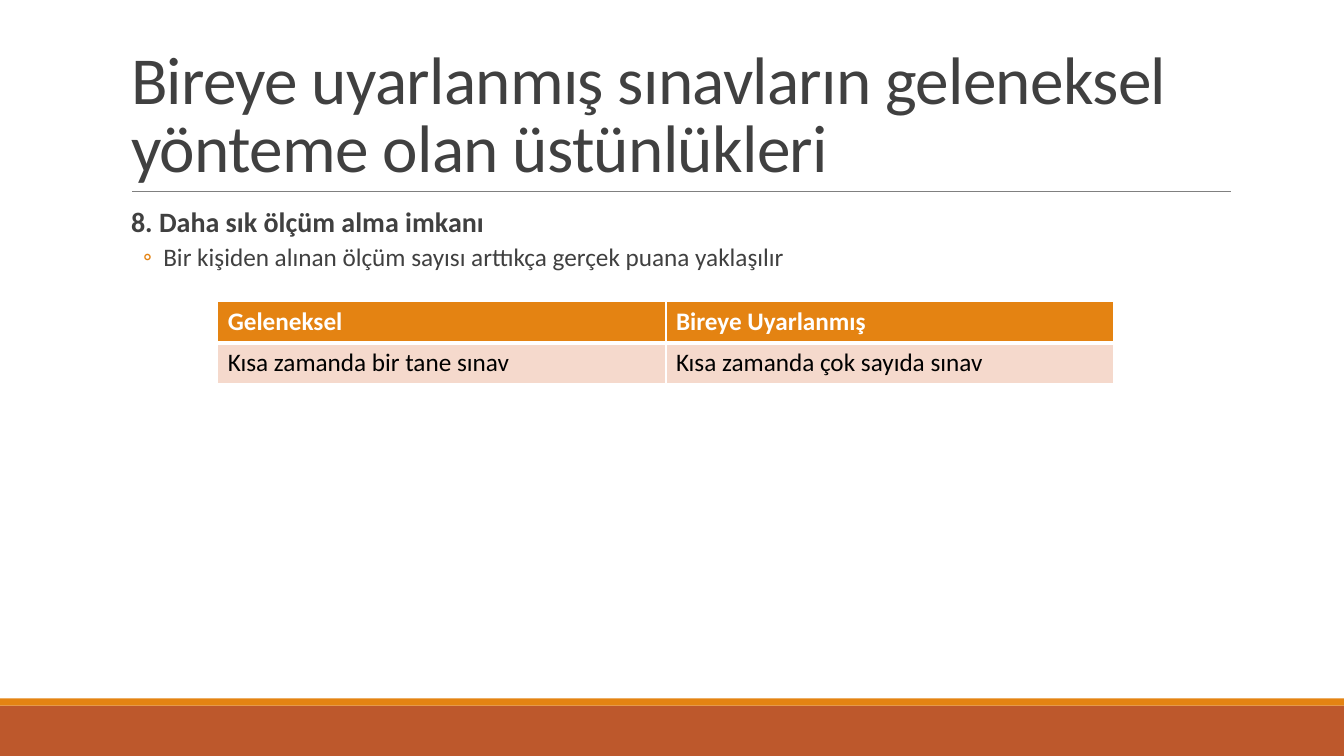
import pptx
import pptx.util
import pptx.dml.color
import pptx.enum.text
import pptx.enum.shapes
import pptx.oxml
import pptx.oxml.ns
from lxml import etree

Inches, Pt = pptx.util.Inches, pptx.util.Pt
RGBColor = pptx.dml.color.RGBColor
qn = pptx.oxml.ns.qn

WHITE = RGBColor(0xFF, 0xFF, 0xFF)
BLACK = RGBColor(0, 0, 0)
DARK = RGBColor(0x40, 0x40, 0x40)
GREY = RGBColor(0x80, 0x80, 0x80)
ORANGE = RGBColor(0xE4, 0x83, 0x12)
RUST = RGBColor(0xBD, 0x58, 0x2C)
PEACH = RGBColor(0xF5, 0xD9, 0xCC)


class SlideBuilder:
    font = "Calibri"

    def __init__(self, prs):
        self.s = prs.slides.add_slide(prs.slide_layouts[5])

    def set_format(self, target, values):
        for name, value in values.items():
            setattr(target, name, value)

    def add_text(self, p, text, size, color, bold=False, **spacing):
        r = p.add_run()
        r.text = text
        self.set_format(r.font, dict(name=self.font, size=Pt(size), bold=bold))
        r.font.color.rgb = color
        self.set_format(p, spacing)
        return r

    def band(self, top, height, color):
        sp = self.s.shapes.add_shape(pptx.enum.shapes.MSO_SHAPE.RECTANGLE,
                                     0, Inches(top), Inches(13.33), Inches(height))
        sp.shadow.inherit = False
        sp.fill.solid()
        sp.fill.fore_color.rgb = color
        sp.line.fill.background()

    def rule(self, left, right, y):
        line = self.s.shapes.add_connector(pptx.enum.shapes.MSO_CONNECTOR.STRAIGHT,
                                           Inches(left), Inches(y), Inches(right), Inches(y))
        line.line.color.rgb = GREY
        line.line.width = Pt(0.5)
        etree.SubElement(line._element.spPr, qn("a:effectLst"))

    def title(self, text, left, top, width, height):
        sp = self.s.shapes.title
        self.set_format(sp, dict(left=Inches(left), top=Inches(top),
                                 width=Inches(width), height=Inches(height)))
        tf = sp.text_frame
        self.set_format(tf, dict(word_wrap=True,
                                 auto_size=pptx.enum.text.MSO_AUTO_SIZE.NONE,
                                 vertical_anchor=pptx.enum.text.MSO_ANCHOR.BOTTOM))
        r = self.add_text(tf.paragraphs[0], text, 48, DARK, line_spacing=0.85,
                          alignment=pptx.enum.text.PP_ALIGN.LEFT)
        r.font._element.set("spc", "-50")

    def body(self, heading, points, left, top, width, height):
        tf = self.s.shapes.add_textbox(Inches(left), Inches(top),
                                       Inches(width), Inches(height)).text_frame
        self.set_format(tf, dict(word_wrap=True, margin_left=0, margin_right=0))
        p = tf.paragraphs[0]
        self.add_text(p, heading, 20, DARK, True, line_spacing=0.9,
                      space_before=Pt(12), space_after=Pt(2))
        p._p.get_or_add_pPr().set("marL", str(Inches(0.1)))
        for point in points:
            p = tf.add_paragraph()
            self.add_text(p, point, 18, DARK, level=1, line_spacing=0.9,
                          space_before=Pt(2), space_after=Pt(4))
            self.bullet(p, "◦", 0.42, 0.2)

    def bullet(self, p, char, margin, hang):
        pPr = p._p.get_or_add_pPr()
        pPr.set("marL", str(Inches(margin)))
        pPr.set("indent", str(-Inches(hang)))
        color = etree.SubElement(pPr, qn("a:buClr"))
        etree.SubElement(color, qn("a:srgbClr"), val=str(ORANGE))
        etree.SubElement(pPr, qn("a:buFont"), typeface=self.font)
        etree.SubElement(pPr, qn("a:buChar"), char=char)

    def table(self, rows, left, top, width, row_height):
        tbl = self.s.shapes.add_table(len(rows), len(rows[0]), Inches(left), Inches(top),
                                      Inches(width), Inches(row_height * len(rows))).table
        for i, row in enumerate(rows):
            head = i == 0
            for j, text in enumerate(row):
                cell = tbl.cell(i, j)
                self.add_text(cell.text_frame.paragraphs[0], text, 18,
                              WHITE if head else BLACK, head)
                # The heavy line below the header is shared with the next row
                self.borders(cell, lnL=1, lnR=1, lnT=1 if head else 3, lnB=3 if head else 1)
                cell.fill.solid()
                cell.fill.fore_color.rgb = ORANGE if head else PEACH

    def borders(self, cell, **widths):
        tcPr = cell._tc.get_or_add_tcPr()
        for side, width in widths.items():
            ln = etree.SubElement(tcPr, qn(f"a:{side}"), w=str(Pt(width)))
            fill = etree.SubElement(ln, qn("a:solidFill"))
            etree.SubElement(fill, qn("a:srgbClr"), val=str(WHITE))


def main():
    prs = pptx.Presentation()
    prs.slide_width, prs.slide_height = Inches(13.33), Inches(7.5)
    slide = SlideBuilder(prs)

    # Footer bands and title rule
    slide.band(7, 0.5, RUST)
    slide.band(6.93, 0.07, ORANGE)
    slide.rule(1.31, 12.21, 1.9)

    # Title and text
    slide.title("Bireye uyarlanmış sınavların geleneksel yönteme olan üstünlükleri",
                1.2, 0.31, 11, 1.59)
    slide.body("8. Daha sık ölçüm alma imkanı",
               ["Bir kişiden alınan ölçüm sayısı arttıkça gerçek puana yaklaşılır"],
               1.2, 2.02, 11, 4.4)

    # Comparison table
    slide.table([["Geleneksel", "Bireye Uyarlanmış"],
                 ["Kısa zamanda bir tane sınav", "Kısa zamanda çok sayıda sınav"]],
                2.16, 2.99, 8.89, 0.41)

    prs.save("out.pptx")


if __name__ == "__main__":
    main()
